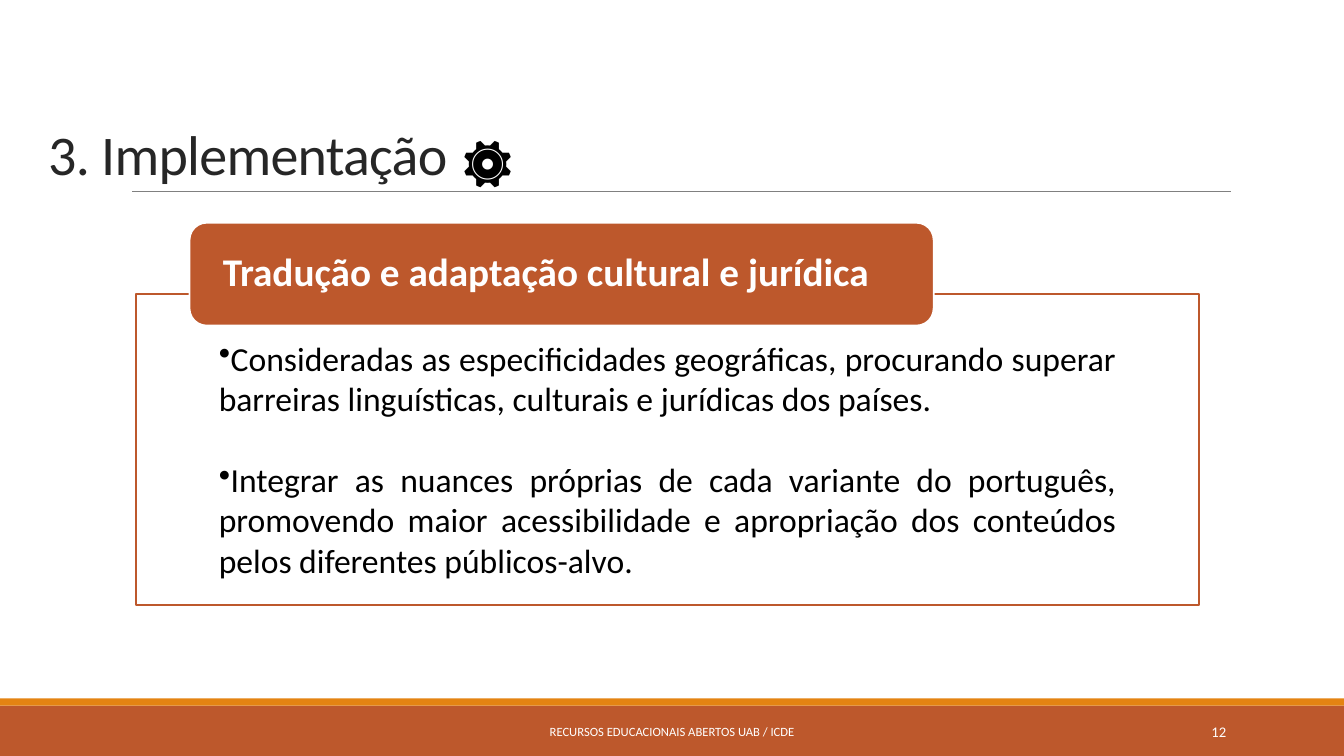
"""Build the slide on the implementation step of the open educational resources project."""
from dataclasses import dataclass
from typing import Optional

import lxml.etree
import pptx
import pptx.dml.color
import pptx.enum.shapes
import pptx.enum.text
import pptx.oxml
import pptx.oxml.ns
import pptx.util

Inches = pptx.util.Inches
Shapes = pptx.enum.shapes.MSO_SHAPE
Align = pptx.enum.text.PP_ALIGN
Anchor = pptx.enum.text.MSO_ANCHOR

COLORS = {
    "rust": "BD582C",
    "orange": "E48312",
    "rule": "808080",
    "title": "262626",
    "black": "000000",
    "white": "FFFFFF",
}


@dataclass(frozen=True)
class Text:
    paragraphs: tuple[str, ...]
    size: float
    color: str
    align: Align = Align.LEFT
    anchor: Anchor = Anchor.MIDDLE
    insets: tuple[float, float, float, float] = (0.1, 0.05, 0.1, 0.05)
    line_spacing: Optional[float] = None
    gap: float = 0
    bold: bool = False
    bulleted: bool = False
    tracking: int = 0


@dataclass(frozen=True)
class Box:
    left: float
    top: float
    width: float
    height: float
    geometry: Optional[Shapes] = None
    fill: str = "white"
    line: Optional[str] = None
    opacity: int = 100
    text: Optional[Text] = None


BOXES = (
    Box(0, 7, 13.33, 0.5, Shapes.RECTANGLE, "rust"),
    Box(0, 6.93, 13.33, 0.07, Shapes.RECTANGLE, "orange"),
    Box(4.03, 7.06, 5.27, 0.4, text=Text(
        ("RECURSOS EDUCACIONAIS ABERTOS UAB / ICDE",), 9, "white", Align.CENTER)),
    Box(10.83, 7.06, 1.43, 0.4, text=Text(("12",), 10.5, "white", Align.RIGHT)),
    Box(1.35, 2.92, 10.54, 3.08, Shapes.RECTANGLE, "white", "rust", 90, Text(
        ("Consideradas as especificidades geográficas, procurando superar barreiras "
         "linguísticas, culturais e jurídicas dos países.",
         "Integrar as nuances próprias de cada variante do português, promovendo maior "
         "acessibilidade e apropriação dos conteúdos pelos diferentes públicos-alvo."),
        24, "black", Align.JUSTIFY, Anchor.TOP, (0.82, 0.43, 0.82, 0.19),
        gap=29, bulleted=True)),
    Box(1.88, 2.21, 7.38, 1.02, Shapes.ROUNDED_RECTANGLE, "rust", "white", text=Text(
        ("Tradução e adaptação cultural e jurídica",), 28, "white",
        insets=(0.28, 0, 0.28, 0), line_spacing=0.9, bold=True)),
    Box(0.38, 1.08, 6.29, 0.82, text=Text(
        ("3. Implementação",), 40, "title", anchor=Anchor.BOTTOM,
        line_spacing=0.85, tracking=-50)),
    Box(4.48, 1.19, 0.97, 0.77, text=Text(("⚙️",), 40, "black", anchor=Anchor.TOP)),
)


def color(name: str) -> pptx.dml.color.RGBColor:
    """Return the named palette colour."""
    return pptx.dml.color.RGBColor.from_string(COLORS[name])


def write_text(shape, text: Text) -> None:
    """Fill a shape with formatted paragraphs."""
    frame = shape.text_frame
    frame.text = "\n".join(text.paragraphs)
    frame.word_wrap = True
    frame.vertical_anchor = text.anchor
    (frame.margin_left, frame.margin_top,
     frame.margin_right, frame.margin_bottom) = map(Inches, text.insets)
    for index, paragraph in enumerate(frame.paragraphs):
        paragraph.alignment = text.align
        if text.line_spacing:
            paragraph.line_spacing = text.line_spacing
        if index:
            paragraph.space_before = pptx.util.Pt(text.gap)
        if text.bulleted:
            properties = paragraph._p.get_or_add_pPr()
            properties.set("marL", "0")
            properties.set("indent", "0")
            bullet = lxml.etree.SubElement(properties, pptx.oxml.ns.qn("a:buChar"))
            bullet.set("char", "•")
        for run in paragraph.runs:
            run.font.name = "Calibri"
            run.font.size = pptx.util.Pt(text.size)
            run.font.bold = text.bold
            run.font.color.rgb = color(text.color)
            if text.tracking:
                run._r.get_or_add_rPr().set("spc", str(text.tracking))


def draw_box(slide, box: Box) -> None:
    """Draw a filled shape or a plain text box."""
    place = tuple(map(Inches, (box.left, box.top, box.width, box.height)))
    if box.geometry is None:
        shape = slide.shapes.add_textbox(*place)
    else:
        shape = slide.shapes.add_shape(box.geometry, *place)
        shape.shadow.inherit = False
        shape.fill.solid()
        shape.fill.fore_color.rgb = color(box.fill)
        if box.opacity < 100:
            fill = shape._element.spPr.find(".//" + pptx.oxml.ns.qn("a:srgbClr"))
            alpha = lxml.etree.SubElement(fill, pptx.oxml.ns.qn("a:alpha"))
            alpha.set("val", str(box.opacity * 1000))
        if box.line:
            shape.line.color.rgb = color(box.line)
            shape.line.width = pptx.util.Pt(1.25)
        else:
            shape.line.fill.background()
    if box.text:
        write_text(shape, box.text)


def draw_title_rule(slide) -> None:
    """Draw the thin line under the title."""
    rule = slide.shapes.add_connector(
        pptx.enum.shapes.MSO_CONNECTOR.STRAIGHT,
        Inches(1.31), Inches(1.9), Inches(12.21), Inches(1.9))
    rule.line.color.rgb = color("rule")
    rule.line.width = pptx.util.Pt(0.5)
    lxml.etree.SubElement(rule._element.spPr, pptx.oxml.ns.qn("a:effectLst"))


def main() -> None:
    """Build and save the presentation."""
    presentation = pptx.Presentation()
    presentation.slide_width = Inches(13.33)
    presentation.slide_height = Inches(7.5)
    slide = presentation.slides.add_slide(presentation.slide_layouts[6])
    draw_title_rule(slide)
    for box in BOXES:
        draw_box(slide, box)
    presentation.save("out.pptx")


if __name__ == "__main__":
    main()
